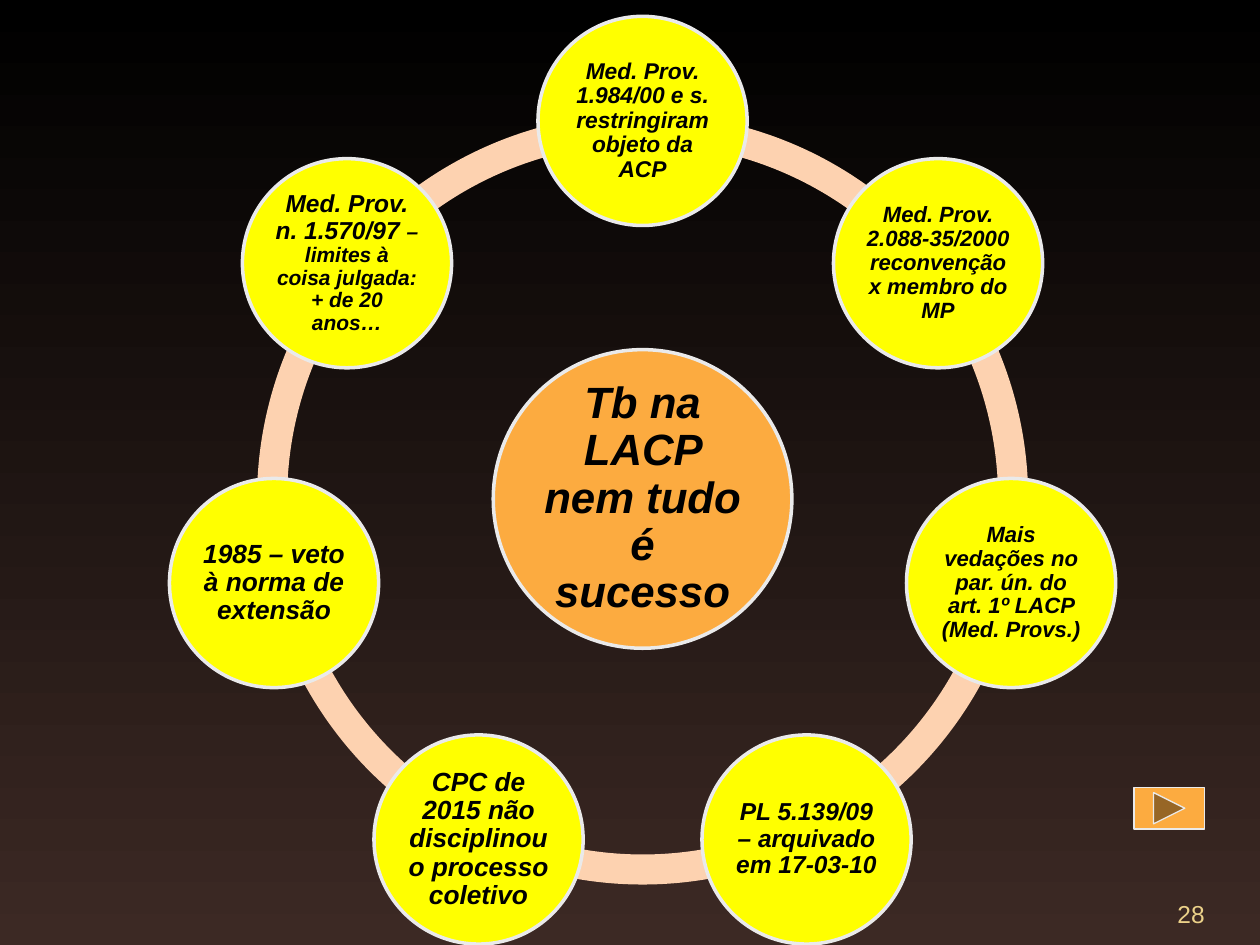
from dataclasses import dataclass
from math import cos, radians, sin

from pptx import Presentation
from pptx.dml.color import RGBColor
from pptx.enum.shapes import MSO_SHAPE
from pptx.enum.text import MSO_ANCHOR, PP_ALIGN
from pptx.shapes.autoshape import Shape
from pptx.slide import Slide
from pptx.util import Inches, Pt

COLUMNS, ROWS = 100, 75
CELL = Inches(0.1)
FONT = "Arial"

BLACK = RGBColor(0x00, 0x00, 0x00)
BROWN = RGBColor(0x3C, 0x29, 0x24)
GOLD = RGBColor(0xEB, 0xD1, 0x89)
PEACH = RGBColor(0xFD, 0xD2, 0xB0)
ORANGE = RGBColor(0xFC, 0xAB, 0x40)
YELLOW = RGBColor(0xFF, 0xFF, 0x00)
PALE_GREY = RGBColor(0xEA, 0xEA, 0xEA)

CENTRE_COLUMN, CENTRE_ROW = 51, 39.6
ORBIT = 30
RING_SIZE, RING_THICKNESS = 61.2, 0.039
HUB_SIZE, EVENT_SIZE = 23.7, 16.6
TOP_ANGLE = 270
ARC_UNITS_PER_DEGREE = 0.6


@dataclass(frozen=True)
class Phrase:
    words: str
    size: float


@dataclass(frozen=True)
class Disc:
    phrases: tuple[Phrase, ...]
    diameter: float
    colour: RGBColor
    inset: float


def event(*phrases: Phrase) -> Disc:
    return Disc(phrases, EVENT_SIZE, YELLOW, 0.2)


HUB = Disc((Phrase("Tb na LACP nem tudo é sucesso", 25),), HUB_SIZE, ORANGE, 0.3)
EVENTS = (
    event(Phrase("Med. Prov. 1.984/00 e s. restringiram objeto da ACP", 13)),
    event(Phrase("Med. Prov. 2.088-35/2000 reconvenção x membro do MP", 12.6)),
    event(Phrase("Mais vedações no par. ún. do art. 1º LACP (Med. Provs.)", 12.6)),
    event(Phrase("PL 5.139/09 – arquivado em 17-03-10", 14)),
    event(Phrase("CPC de 2015 não disciplinou o processo coletivo", 15)),
    event(Phrase("1985 – veto à norma de extensão", 15)),
    event(
        Phrase("Med. Prov. n. 1.570/97 ", 14),
        Phrase("– limites à coisa julgada: + de 20 anos…", 12),
    ),
)
STEP = 360 / len(EVENTS)


def cells(count: float) -> int:
    return round(count * CELL)


def draw_shape(slide: Slide, preset: MSO_SHAPE, column: float, row: float,
               width: float, height: float, colour: RGBColor,
               outline: float = 0) -> Shape:
    shape = slide.shapes.add_shape(
        preset, cells(column), cells(row), cells(width), cells(height))
    shape.shadow.inherit = False
    shape.fill.solid()
    shape.fill.fore_color.rgb = colour
    if outline:
        shape.line.color.rgb = PALE_GREY
        shape.line.width = Pt(outline)
    else:
        shape.line.fill.background()
    return shape


def draw_arc(slide: Slide, start: float) -> None:
    arc = draw_shape(slide, MSO_SHAPE.BLOCK_ARC, CENTRE_COLUMN - RING_SIZE / 2,
                     CENTRE_ROW - RING_SIZE / 2, RING_SIZE, RING_SIZE, PEACH)
    arc.adjustments[0] = start % 360 * ARC_UNITS_PER_DEGREE
    arc.adjustments[1] = (start + STEP) % 360 * ARC_UNITS_PER_DEGREE
    arc.adjustments[2] = RING_THICKNESS


def draw_disc(slide: Slide, disc: Disc, angle: float = 0, orbit: float = 0) -> None:
    column = CENTRE_COLUMN + orbit * cos(radians(angle)) - disc.diameter / 2
    row = CENTRE_ROW + orbit * sin(radians(angle)) - disc.diameter / 2
    circle = draw_shape(slide, MSO_SHAPE.OVAL, column, row,
                        disc.diameter, disc.diameter, disc.colour, 2)
    frame = circle.text_frame
    frame.word_wrap = True
    frame.vertical_anchor = MSO_ANCHOR.MIDDLE
    frame.margin_left = frame.margin_right = cells(disc.inset)
    frame.margin_top = frame.margin_bottom = cells(disc.inset)
    paragraph = frame.paragraphs[0]
    paragraph.alignment = PP_ALIGN.CENTER
    paragraph.line_spacing = 0.9
    for phrase in disc.phrases:
        run = paragraph.add_run()
        run.text = phrase.words
        run.font.name = FONT
        run.font.size = Pt(phrase.size)
        run.font.bold = run.font.italic = True
        run.font.color.rgb = BLACK


def draw_page_number(slide: Slide, number: str) -> None:
    frame = slide.shapes.add_textbox(
        cells(75.8), cells(69.2), cells(20.8), cells(5)).text_frame
    frame.word_wrap = True
    frame.vertical_anchor = MSO_ANCHOR.BOTTOM
    paragraph = frame.paragraphs[0]
    paragraph.alignment = PP_ALIGN.RIGHT
    run = paragraph.add_run()
    run.text = number
    run.font.name = FONT
    run.font.size = Pt(14)
    run.font.color.rgb = GOLD


def paint_background(slide: Slide) -> None:
    fill = slide.background.fill
    fill.gradient()
    fill.gradient_angle = 270
    for stop, position, colour in zip(fill.gradient_stops, (0, 1), (BLACK, BROWN)):
        stop.position = position
        stop.color.rgb = colour


def main() -> None:
    deck = Presentation()
    deck.slide_width, deck.slide_height = cells(COLUMNS), cells(ROWS)
    slide = deck.slides.add_slide(deck.slide_layouts[6])
    paint_background(slide)
    draw_page_number(slide, "28")
    angles = [TOP_ANGLE + STEP * place for place in range(len(EVENTS))]
    for angle in angles:
        draw_arc(slide, angle)
    draw_disc(slide, HUB)
    for angle, milestone in zip(angles, EVENTS):
        draw_disc(slide, milestone, angle, ORBIT)
    draw_shape(slide, MSO_SHAPE.ACTION_BUTTON_FORWARD_OR_NEXT,
               90, 62.5, 5.6, 3.3, ORANGE, 0.75)
    deck.save("out.pptx")


if __name__ == "__main__":
    main()
